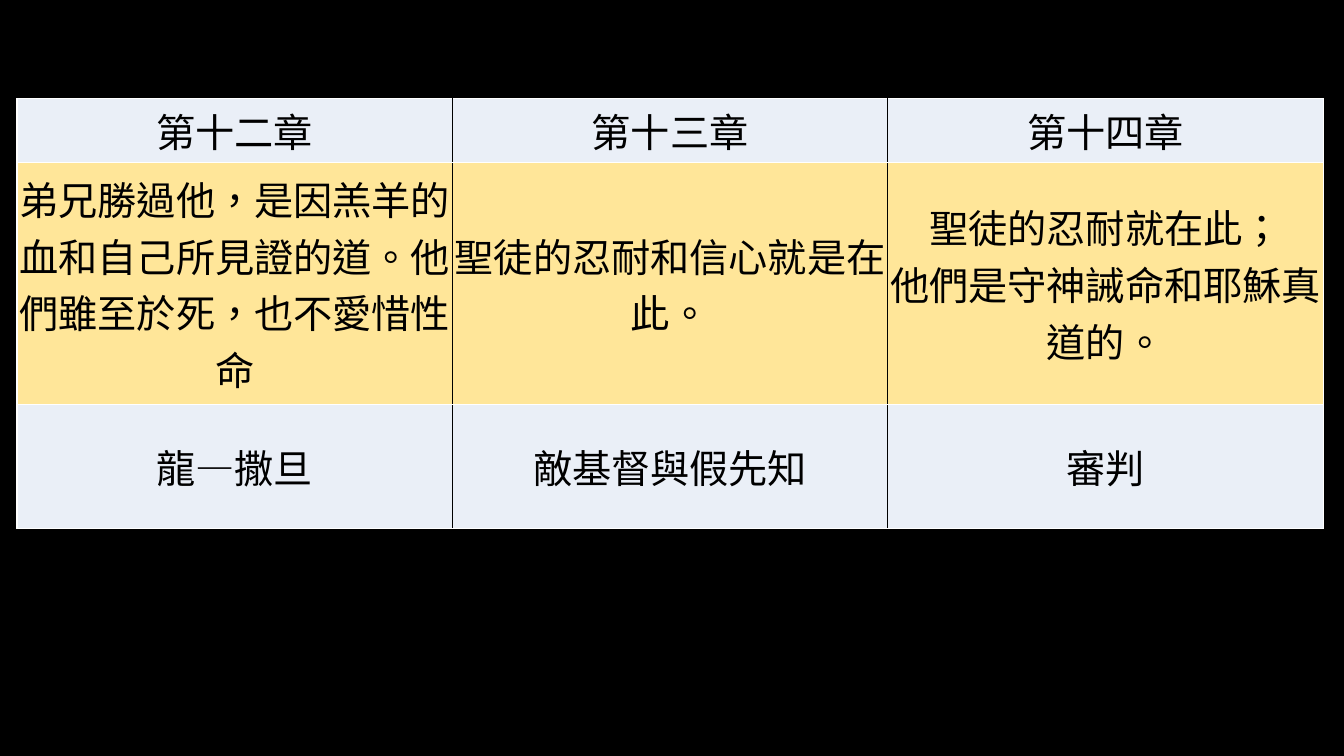
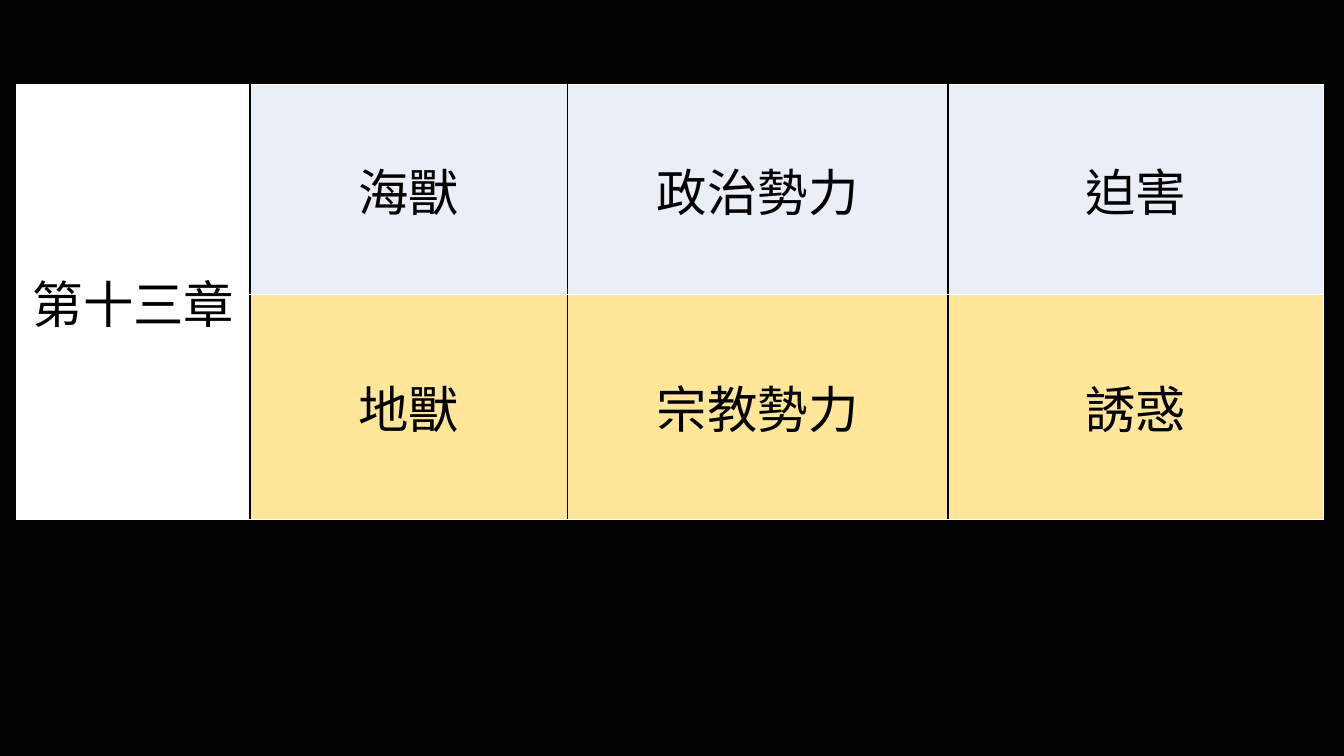
from dataclasses import dataclass

from lxml.etree import SubElement
from pptx import Presentation
from pptx.dml.color import RGBColor as RGB
from pptx.enum.text import MSO_ANCHOR as Anchor, PP_ALIGN as Align
from pptx.oxml.ns import qn
from pptx.util import Pt


@dataclass(frozen=True)
class Theme:
    font: str = "Lato"
    language: str = "zh-TW"
    background: str = "000000"
    ink: str = "000000"
    rule: str = "000000"
    edge: str = "FFFFFF"
    heading: str = "FFFFFF"
    bands: tuple = ("EAEFF7", "FFE699")
    body_size: int = 28
    large_size: int = 36
    border_width: int = 1
    band_space: float = 2.4
    side_margin: float = 1.44


THEME = Theme()
LEFT = 12.2

CHAPTERS = [
    ["第十二章", "第十三章", "第十四章"],
    ["弟兄勝過他，是因羔羊的血和自己所見證的道。他們雖至於死，也不愛惜性命",
     "聖徒的忍耐和信心就是在此。",
     "聖徒的忍耐就在此；\n他們是守神誡命和耶穌真道的。"],
    ["龍—撒旦", "敵基督與假先知", "審判"],
]
BEASTS = [
    ["第十三章", "海獸", "政治勢力", "迫害"],
    ["", "地獸", "宗教勢力", "誘惑"],
]


def add_black_slide(prs):
    slide = prs.slides.add_slide(prs.slide_layouts[6])
    backdrop = slide.background.fill
    backdrop.solid()
    backdrop.fore_color.rgb = RGB.from_string(THEME.background)
    return slide


def set_borders(cell, left, right):
    """Draw the side borders in the given colours, and light ones above and below."""
    properties = cell._tc.get_or_add_tcPr()
    sides = {"a:lnL": left, "a:lnR": right, "a:lnT": THEME.edge, "a:lnB": THEME.edge}
    for side, colour in sides.items():
        line = SubElement(properties, qn(side), w=str(Pt(THEME.border_width)))
        SubElement(SubElement(line, qn("a:solidFill")), qn("a:srgbClr"), val=colour)


def set_fill(cell, colour):
    cell.fill.solid()
    cell.fill.fore_color.rgb = RGB.from_string(colour)


def set_text(cell, wording, size, space_before):
    cell.vertical_anchor = Anchor.MIDDLE
    cell.margin_left = cell.margin_right = Pt(THEME.side_margin)
    cell.margin_top = cell.margin_bottom = 0
    cell.text_frame.text = wording
    cell.text_frame.paragraphs[0].space_before = Pt(space_before)
    for paragraph in cell.text_frame.paragraphs:
        paragraph.alignment = Align.CENTER
        for run in paragraph.runs:
            run.font.name = THEME.font
            run.font.size = Pt(size)
            run.font.color.rgb = RGB.from_string(THEME.ink)
            run._r.get_or_add_rPr().set("lang", THEME.language)


def add_banded_table(slide, left, top, widths, heights, wordings, size):
    """Add a table whose rows alternate in colour, with dark rules between columns."""
    table = slide.shapes.add_table(
        len(heights), len(widths), Pt(left), Pt(top),
        Pt(sum(widths)), Pt(sum(heights))).table
    table.first_row = table.horz_banding = False
    for column, width in zip(table.columns, widths):
        column.width = Pt(width)
    for r, (height, row) in enumerate(zip(heights, wordings)):
        table.rows[r].height = Pt(height)
        band = r % 2
        for c, wording in enumerate(row):
            cell = table.cell(r, c)
            set_borders(cell,
                        left=THEME.rule if c else THEME.edge,
                        right=THEME.rule if c < len(row) - 1 else THEME.edge)
            set_fill(cell, THEME.bands[band])
            set_text(cell, wording, size, band * THEME.band_space)
    return table


def add_chapters_slide(prs):
    add_banded_table(add_black_slide(prs), LEFT, 70.6, [311] * 3,
                     [45.4, 172.8, 88.6], CHAPTERS, THEME.body_size)


def add_beasts_slide(prs):
    table = add_banded_table(add_black_slide(prs), LEFT, 60.5,
                             [166.4, 226.8, 271.8, 268], [149.8, 160.6],
                             BEASTS, THEME.large_size)
    chapter, below = table.cell(0, 0), table.cell(1, 0)
    for cell in (chapter, below):
        set_fill(cell, THEME.heading)
    chapter.merge(below)


def main():
    prs = Presentation()
    prs.slide_width, prs.slide_height = Pt(960), Pt(540)
    add_chapters_slide(prs)
    add_beasts_slide(prs)
    prs.save("out.pptx")


if __name__ == "__main__":
    main()
